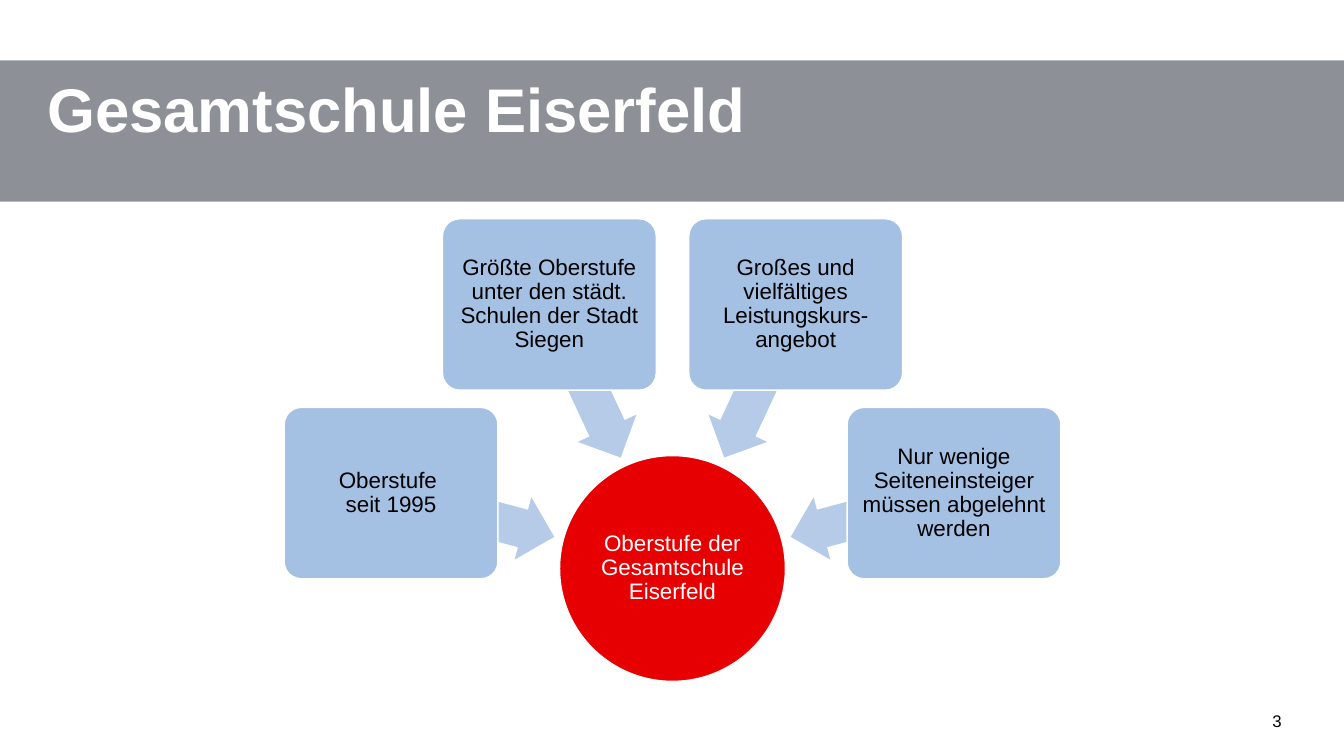
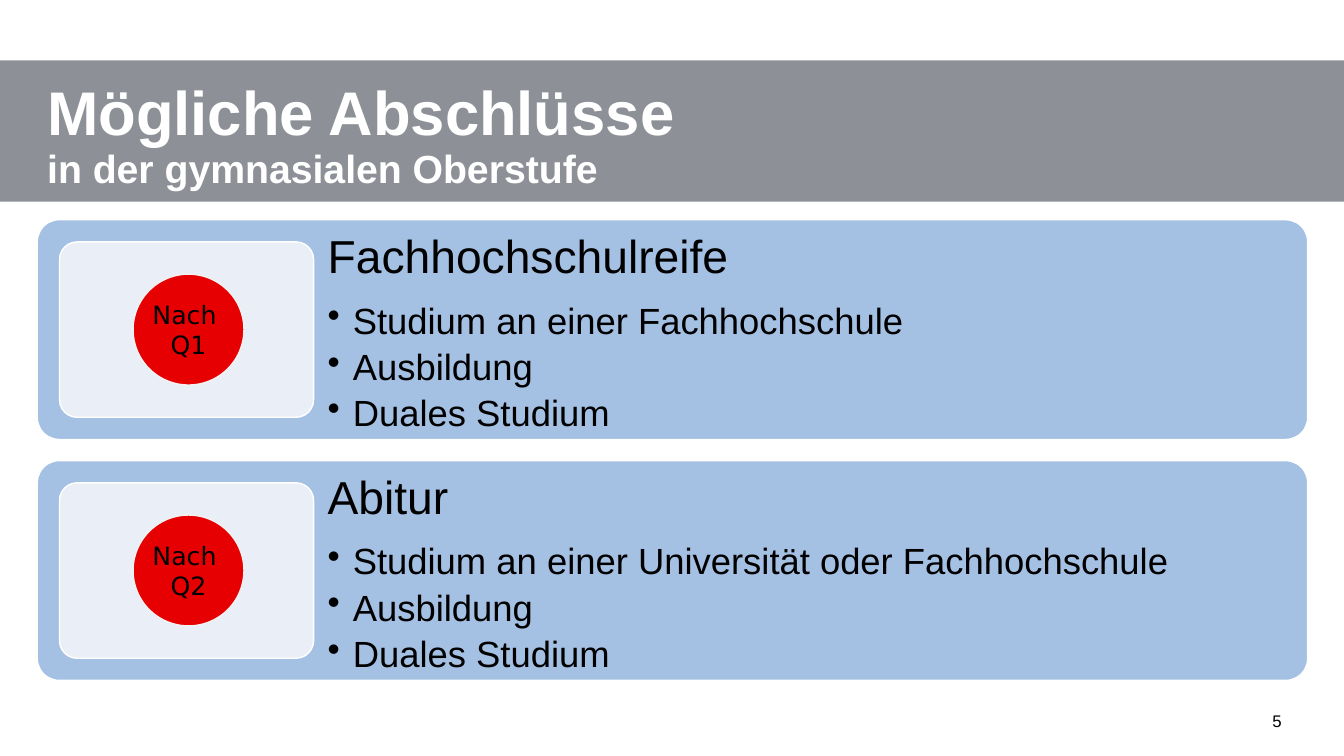
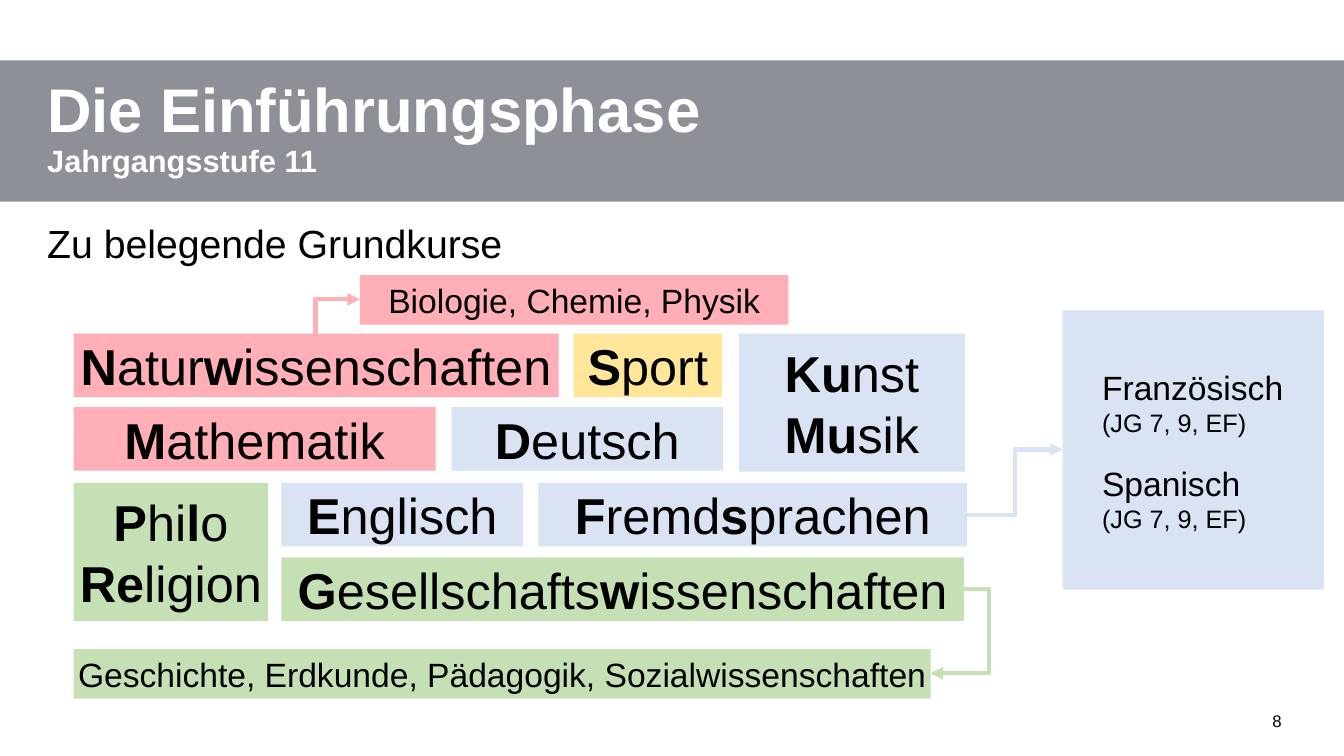
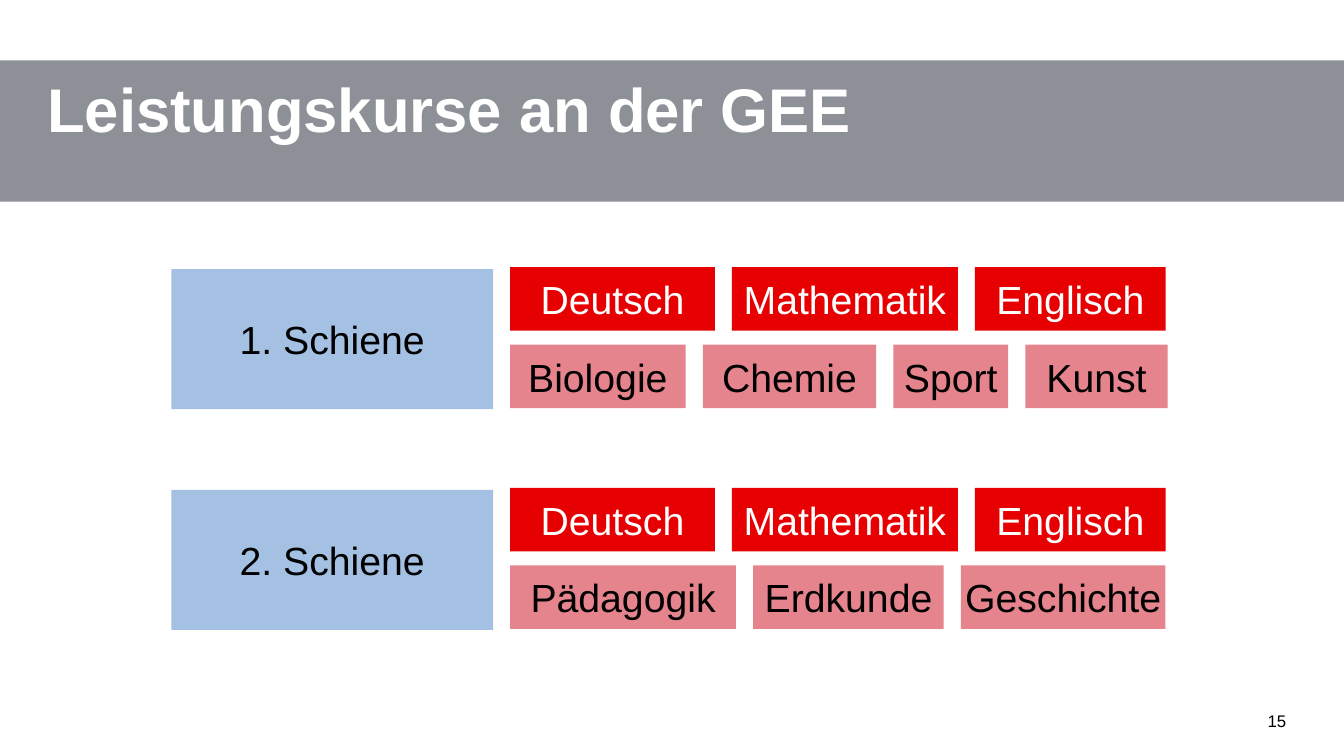
from math import cos, radians, sin

from lxml import etree
from pptx import Presentation
from pptx.dml.color import RGBColor
from pptx.enum.shapes import MSO_CONNECTOR, MSO_SHAPE
from pptx.enum.text import MSO_ANCHOR, PP_ALIGN
from pptx.oxml.ns import qn
from pptx.util import Inches, Pt

RECT = MSO_SHAPE.RECTANGLE
ROUND = MSO_SHAPE.ROUNDED_RECTANGLE
OVAL = MSO_SHAPE.OVAL
CONNECTOR_DOT = MSO_SHAPE.FLOWCHART_CONNECTOR
LEFT_ARROW = MSO_SHAPE.LEFT_ARROW
ELBOW = MSO_CONNECTOR.ELBOW
TOP, MIDDLE = MSO_ANCHOR.TOP, MSO_ANCHOR.MIDDLE
LEFT, CENTER = PP_ALIGN.LEFT, PP_ALIGN.CENTER

WHITE, BLACK, GREY = "FFFFFF", "000000", "8D9197"
RED, DARK_RED = "E60002", "CD0A1A"
BLUE, ARROW_BLUE, PALE_BLUE, ICE = "A4C0E3", "B5CBE7", "DAE3F3", "EAEFF7"
PINK, YELLOW, GREEN = "FFAFB5", "FFE699", "C5E0B4"


def rgb(color):
    return RGBColor.from_string(color)


def write(tf, text, size=16, small=None, color=BLACK, font="Arial", bold=False,
          align=LEFT, spacing=None, before=0, after=0, bullet=None):
    """Add a paragraph; *stars* toggle bold, lines after the first use small."""
    p = tf.paragraphs[0]
    if p.runs:
        p = tf.add_paragraph()
    p.alignment = align
    p.space_before, p.space_after = Pt(before), Pt(after)
    if spacing:
        p.line_spacing = spacing
    if bullet:
        pPr = p._p.get_or_add_pPr()
        pPr.set("marL", str(Inches(0.25)))
        pPr.set("indent", str(Inches(-0.25)))
        etree.SubElement(pPr, qn("a:buChar"), char=bullet)
    for line_no, line in enumerate(text.split("\n")):
        if line_no:
            p.add_line_break()
        for part_no, part in enumerate(line.split("*")):
            if part:
                r = p.add_run()
                r.text = part
                r.font.name = font
                r.font.size = Pt(small if line_no and small else size)
                r.font.bold = bold or part_no % 2 == 1
                r.font.color.rgb = rgb(color)


def set_frame(tf, anchor=TOP, insets=(0.1, 0.05, 0.1, 0.05), wrap=True):
    tf.word_wrap = wrap
    tf.vertical_anchor = anchor
    tf.margin_left, tf.margin_top, tf.margin_right, tf.margin_bottom = map(Inches, insets)
    return tf


def add_text_box(s, x, y, w, h, **frame):
    sp = s.shapes.add_textbox(Inches(x), Inches(y), Inches(w), Inches(h))
    return set_frame(sp.text_frame, **frame)


def add_shape(s, kind, x, y, w, h, fill, line=None, alpha=None, adj=()):
    sp = s.shapes.add_shape(kind, Inches(x), Inches(y), Inches(w), Inches(h))
    sp.shadow.inherit = False
    sp.fill.solid()
    sp.fill.fore_color.rgb = rgb(fill)
    if alpha:
        clr = sp._element.spPr.find(qn("a:solidFill"))[0]
        etree.SubElement(clr, qn("a:alpha"), val=str(alpha * 1000))
    if line:
        sp.line.color.rgb = rgb(line)
        sp.line.width = Pt(1)
    else:
        sp.line.fill.background()
    for i, value in enumerate(adj):
        sp.adjustments[i] = value
    return sp


def add_label(s, x, y, w, h, fill, *paragraphs, size=36, color=BLACK, alpha=None):
    """Filled box with centred text."""
    sp = add_shape(s, RECT, x, y, w, h, fill, alpha=alpha)
    tf = set_frame(sp.text_frame, MIDDLE, (0, 0, 0, 0))
    for text in paragraphs:
        write(tf, text, size=size, color=color, align=CENTER)


def add_elbow(s, start, end, color, arrow="tailEnd", preset="bentConnector3", bend=None):
    c = s.shapes.add_connector(ELBOW, *map(Inches, start + end))
    c.line.color.rgb = rgb(color)
    c.line.width = Pt(3)
    spPr = c._element.spPr
    etree.SubElement(spPr.find(qn("a:ln")), qn("a:" + arrow), type="triangle")
    etree.SubElement(spPr, qn("a:effectLst"))
    geom = spPr.find(qn("a:prstGeom"))
    geom.set("prst", preset)
    if bend is not None:
        etree.SubElement(geom.find(qn("a:avLst")), qn("a:gd"),
                         name="adj1", fmla=f"val {round(bend * 100000)}")


def add_base_slide(prs, title, number, small=None, anchor=TOP):
    s = prs.slides.add_slide(prs.slide_layouts[6])
    add_shape(s, RECT, 0, 0.6, 13.33, 1.4, GREY)
    tf = add_text_box(s, 0.37, 0.74, 11.83, 1.24, anchor=anchor)
    write(tf, title, size=44, small=small, color=WHITE, bold=True, spacing=0.9)
    tf = add_text_box(s, 12.37, 6.86, 0.59, 0.59, anchor=MIDDLE)
    write(tf, str(number), size=12, align=CENTER)
    return s


def add_school_slide(prs):
    s = add_base_slide(prs, "Gesamtschule Eiserfeld", 3)
    hub_x, hub_y, hub_d = 6.67, 5.64, 2.24
    box_w, box_h, box_radius = 2.12, 1.7, 2.89
    arrow_w, arrow_h, arrow_radius = 1.67, 0.64, 2.05

    def around_hub(angle, radius, w, h):
        a = radians(angle)
        return hub_x + radius * cos(a) - w / 2, hub_y + radius * sin(a) - h / 2, w, h

    hub = add_shape(s, OVAL, *around_hub(0, 0, hub_d, hub_d), RED, WHITE)
    write(set_frame(hub.text_frame, MIDDLE, (0.01,) * 4),
          "Oberstufe der Gesamtschule Eiserfeld", color=WHITE, align=CENTER, spacing=0.9)
    features = [
        "Oberstufe \nseit 1995",
        "Größte Oberstufe unter den städt. Schulen der Stadt Siegen",
        "Großes und vielfältiges Leistungskurs-angebot",
        "Nur wenige Seiteneinsteiger müssen abgelehnt werden",
    ]
    for i, feature in enumerate(features):
        angle = 195 + 50 * i
        arrow = add_shape(s, LEFT_ARROW, *around_hub(angle, arrow_radius, arrow_w, arrow_h),
                          ARROW_BLUE, adj=(0.6, 0.5))
        arrow.rotation = angle
        box = add_shape(s, ROUND, *around_hub(angle, box_radius, box_w, box_h),
                        BLUE, WHITE, adj=(0.1,))
        write(set_frame(box.text_frame, MIDDLE, (0.03,) * 4), feature,
              align=CENTER, spacing=0.9)


def add_degrees_slide(prs):
    s = add_base_slide(prs, "Mögliche Abschlüsse\nin der gymnasialen Oberstufe", 5,
                       small=28, anchor=MIDDLE)
    degrees = [
        ("Q1", "Fachhochschulreife", "Studium an einer Fachhochschule"),
        ("Q2", "Abitur", "Studium an einer Universität oder Fachhochschule"),
    ]
    for i, (stage, degree, study) in enumerate(degrees):
        y = 2.18 + 2.39 * i
        add_shape(s, ROUND, 0.37, y, 12.6, 2.18, BLUE, WHITE, adj=(0.1,))
        add_shape(s, ROUND, 0.59, y + 0.22, 2.52, 1.74, ICE, WHITE, adj=(0.1,))
        tf = add_text_box(s, 3.11, y, 9.86, 2.18, insets=(0.14,) * 4)
        write(tf, degree, size=33, spacing=0.9, after=13.5)
        for item in (study, "Ausbildung", "Duales Studium"):
            write(tf, item, size=26, spacing=0.9, after=5, bullet="•")
        dot = add_shape(s, CONNECTOR_DOT, 1.32, y + 0.54, 1.1, 1.1, RED, "F2F2F2")
        tf = set_frame(dot.text_frame, MIDDLE, (0, 0, 0, 0), wrap=False)
        for text in ("Nach ", stage):
            write(tf, text, size=18, font="DejaVu Sans", align=CENTER)


def add_intro_phase_slide(prs):
    s = add_base_slide(prs, "Die Einführungsphase\nJahrgangsstufe 11", 8, small=22)
    write(add_text_box(s, 0.37, 2.18, 12.6, 0.6), "Zu belegende Grundkurse",
          size=28, spacing=0.9)
    row, tall = 0.63, 1.37
    courses = [
        (0.73, 3.31, 4.81, row, PINK, "*N*atur*w*issenschaften"),
        (5.69, 3.31, 1.47, row, YELLOW, "*S*port"),
        (7.33, 3.31, 2.24, tall, PALE_BLUE, "*Ku*nst", "*Mu*sik"),
        (0.73, 4.04, 3.59, row, PINK, "*M*athematik"),
        (4.48, 4.04, 2.69, row, PALE_BLUE, "*D*eutsch"),
        (0.73, 4.79, 1.93, tall, GREEN, "*P*hi*l*o", "*Re*ligion"),
        (2.79, 4.79, 2.4, row, PALE_BLUE, "*E*nglisch"),
        (5.34, 4.79, 4.25, row, PALE_BLUE, "*F*remd*s*prachen"),
        (2.79, 5.53, 6.77, row, GREEN, "*G*esellschafts*w*issenschaften"),
    ]
    for course in courses:
        add_label(s, *course)
    add_label(s, 3.57, 2.73, 4.25, 0.49, PINK, "Biologie, Chemie, Physik", size=24)
    add_label(s, 0.73, 6.44, 8.5, 0.49, GREEN,
              "Geschichte, Erdkunde, Pädagogik, Sozialwissenschaften", size=24)
    languages = add_shape(s, RECT, 10.54, 3.08, 2.59, 2.77, PALE_BLUE)
    tf = set_frame(languages.text_frame, MIDDLE, (0.39, 0, 0, 0))
    write(tf, "Französisch\n(JG 7, 9, EF)", size=24, small=18)
    write(tf, "Spanisch\n(JG 7, 9, EF)", size=24, small=18, before=18)
    add_elbow(s, (3.57, 2.97), (3.13, 3.31), PINK, arrow="headEnd", preset="bentConnector2")
    add_elbow(s, (9.56, 5.84), (9.23, 6.68), GREEN, bend=-0.75)
    add_elbow(s, (9.59, 5.11), (10.54, 4.46), PALE_BLUE)


def add_course_row(s, y, courses, **fmt):
    x = 5.06
    for name, width in courses:
        add_label(s, x, y, width, 0.63, text_fill(fmt), name, size=28,
                  color=fmt["color"], alpha=fmt.get("alpha"))
        x += width + 0.17


def text_fill(fmt):
    return fmt["fill"]


def add_advanced_courses_slide(prs):
    s = add_base_slide(prs, "Leistungskurse an der GEE", 15)
    core = [("Deutsch", 2.03), ("Mathematik", 2.24), ("Englisch", 1.89)]
    tracks = [
        [("Biologie", 1.74), ("Chemie", 1.72), ("Sport", 1.14), ("Kunst", 1.41)],
        [("Pädagogik", 2.24), ("Erdkunde", 1.89), ("Geschichte", 2.03)],
    ]
    for i, electives in enumerate(tracks):
        y = 2.65 + 2.19 * i
        add_label(s, 1.7, y + 0.02, 3.19, 1.39, BLUE, f"{i + 1}. Schiene", size=28)
        add_course_row(s, y, core, fill=RED, color=WHITE)
        add_course_row(s, y + 0.77, electives, fill=DARK_RED, color=BLACK, alpha=50)


def main():
    prs = Presentation()
    prs.slide_width, prs.slide_height = Inches(13.33), Inches(7.5)
    add_school_slide(prs)
    add_degrees_slide(prs)
    add_intro_phase_slide(prs)
    add_advanced_courses_slide(prs)
    prs.save("out.pptx")


if __name__ == "__main__":
    main()
